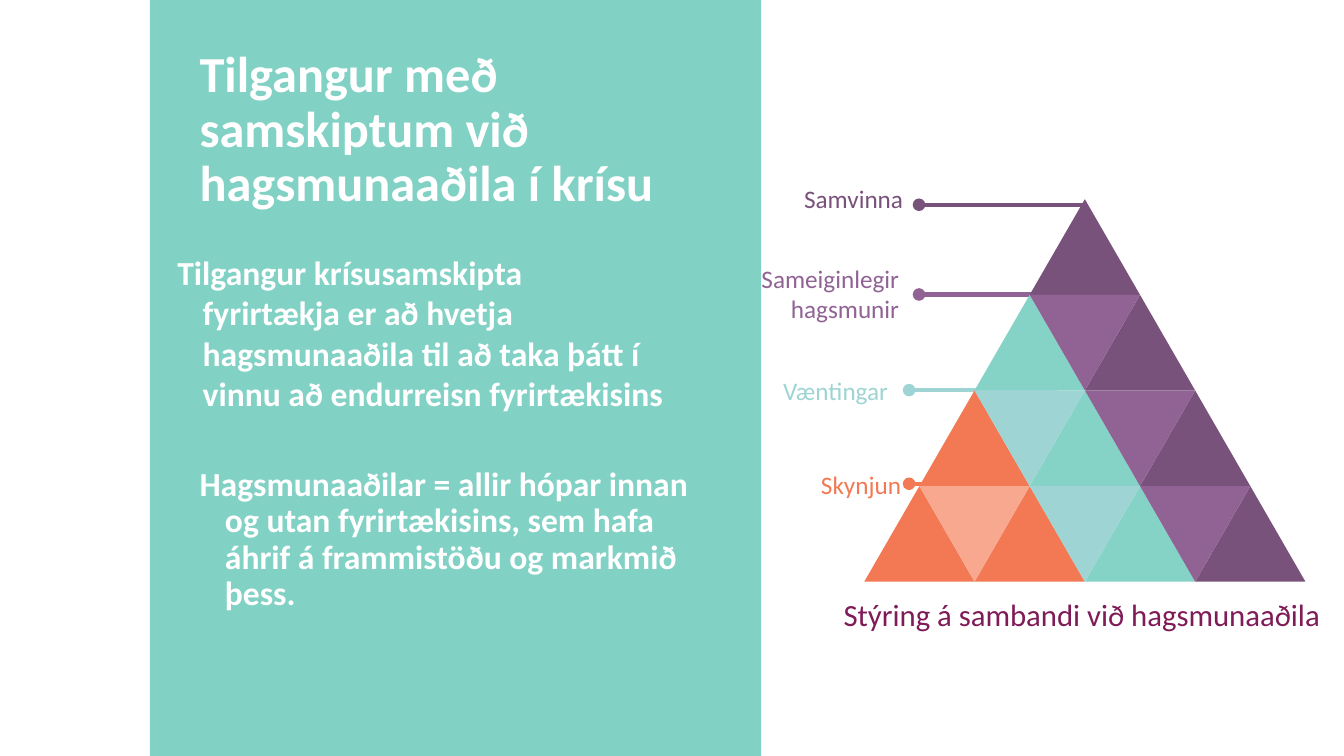
"""Build the slide on stakeholder relations with its four-level pyramid."""
from lxml.etree import SubElement
from pptx import Presentation
from pptx.dml.color import RGBColor
from pptx.enum.shapes import MSO_CONNECTOR as Line, MSO_SHAPE as Shape
from pptx.enum.text import MSO_ANCHOR as Anchor, PP_ALIGN as Align
from pptx.oxml.ns import qn
from pptx.util import Cm, Pt

WHITE = RGBColor(0xFF, 0xFF, 0xFF)
MINT = RGBColor(0x81, 0xD1, 0xC5)
TEAL = RGBColor(0x85, 0xD2, 0xC7)
SKY = RGBColor(0x9E, 0xD4, 0xD3)
PLUM = RGBColor(0x79, 0x52, 0x7B)
LILAC = RGBColor(0x91, 0x63, 0x95)
CORAL = RGBColor(0xF2, 0x79, 0x54)
PEACH = RGBColor(0xF7, 0xA8, 0x8F)
WINE = RGBColor(0x7F, 0x1C, 0x58)

deck = Presentation()
deck.slide_width, deck.slide_height = Cm(33.87), Cm(19.05)
shapes = deck.slides.add_slide(deck.slide_layouts[6]).shapes


def add_text(words, left, top, width, height, size, color, align=Align.LEFT, anchor=Anchor.TOP):
    frame = shapes.add_textbox(Cm(left), Cm(top), Cm(width), Cm(height)).text_frame
    frame.word_wrap = True
    frame.vertical_anchor = anchor
    para = frame.paragraphs[0]
    para.text = words
    para.alignment = align
    font = para.font
    font.name, font.size, font.color.rgb = "Calibri", Pt(size), color
    return para


def add_tri(x, base, tip, color):
    build = shapes.build_freeform(Cm(x), Cm(tip))
    build.add_line_segments([(Cm(x + HALF), Cm(base)), (Cm(x - HALF), Cm(base))])
    tri = build.convert_to_shape()
    tri.shadow.inherit = False
    tri.fill.solid()
    tri.fill.fore_color.rgb = color
    tri.line.fill.background()


panel = shapes.add_shape(Shape.RECTANGLE, Cm(3.78), 0, Cm(15.4), deck.slide_height)
panel.shadow.inherit = False
panel.fill.solid()
panel.fill.fore_color.rgb = MINT
panel.line.fill.background()

title = add_text("Tilgangur með samskiptum við hagsmunaaðila í krísu",
                 4.78, 1.12, 13.11, 4.5, 36, WHITE)
aim = add_text("Tilgangur krísusamskipta fyrirtækja er að hvetja hagsmunaaðila "
               "til að taka þátt í vinnu að endurreisn fyrirtækisins",
               4.22, 6.22, 12.83, 5.21, 24, WHITE)
group = add_text("Hagsmunaaðilar = allir hópar innan og utan fyrirtækisins, "
                 "sem hafa áhrif á frammistöðu og markmið þess.",
                 4.78, 11.66, 12.83, 5.21, 24, WHITE)
for para in (title, aim, group):
    para.font.bold = True
for para in (title, group):
    para.line_spacing = 0.9
for para in (aim, group):
    props = para._p.get_or_add_pPr()
    props.set("marL", str(Cm(0.64)))
    props.set("indent", str(-Cm(0.64)))

LEVELS = [
    ("Samvinna", PLUM, 23.01, 5.0, 23.16, 27.34, 5.16),
    ("Sameiginlegir hagsmunir", LILAC, 22.91, 7.4, 23.16, 28.02, 7.42),
    ("Væntingar", SKY, 22.63, 9.83, 22.91, 26.64, 9.83),
    ("Skynjun", CORAL, 22.96, 12.22, 22.91, 25.25, 12.19),
]
for words, color, right, mid, dot, end, y in LEVELS:
    add_text(words, right - 4.22, mid - 0.9, 4.22, 1.8, 18, color, Align.RIGHT, Anchor.MIDDLE)
    link = shapes.add_connector(Line.STRAIGHT, Cm(end), Cm(y), Cm(dot), Cm(y))
    link.line.color.rgb = color
    link.line.width = Pt(3)
    SubElement(link.line._get_or_add_ln(), qn("a:tailEnd"), type="oval")
    SubElement(link._element.spPr, qn("a:effectLst"))

APEX, TOP, HALF, RISE = 27.34, 5.02, 1.39, 2.41
UP = [PLUM, TEAL, CORAL, CORAL]
DOWN = [LILAC, SKY, PEACH]
for row in range(4):
    high = TOP + row * RISE
    low = high + RISE
    for step in range(row + 1):
        add_tri(APEX + (row - 2 * step) * HALF, low, high, UP[step])
    for step in range(row):
        add_tri(APEX + (row - 1 - 2 * step) * HALF, high, low, DOWN[step])

add_text("Stýring á sambandi við hagsmunaaðila", 20.14, 14.88, 14.25, 1.19, 22, WINE,
         Align.CENTER, Anchor.BOTTOM)

deck.save("out.pptx")
